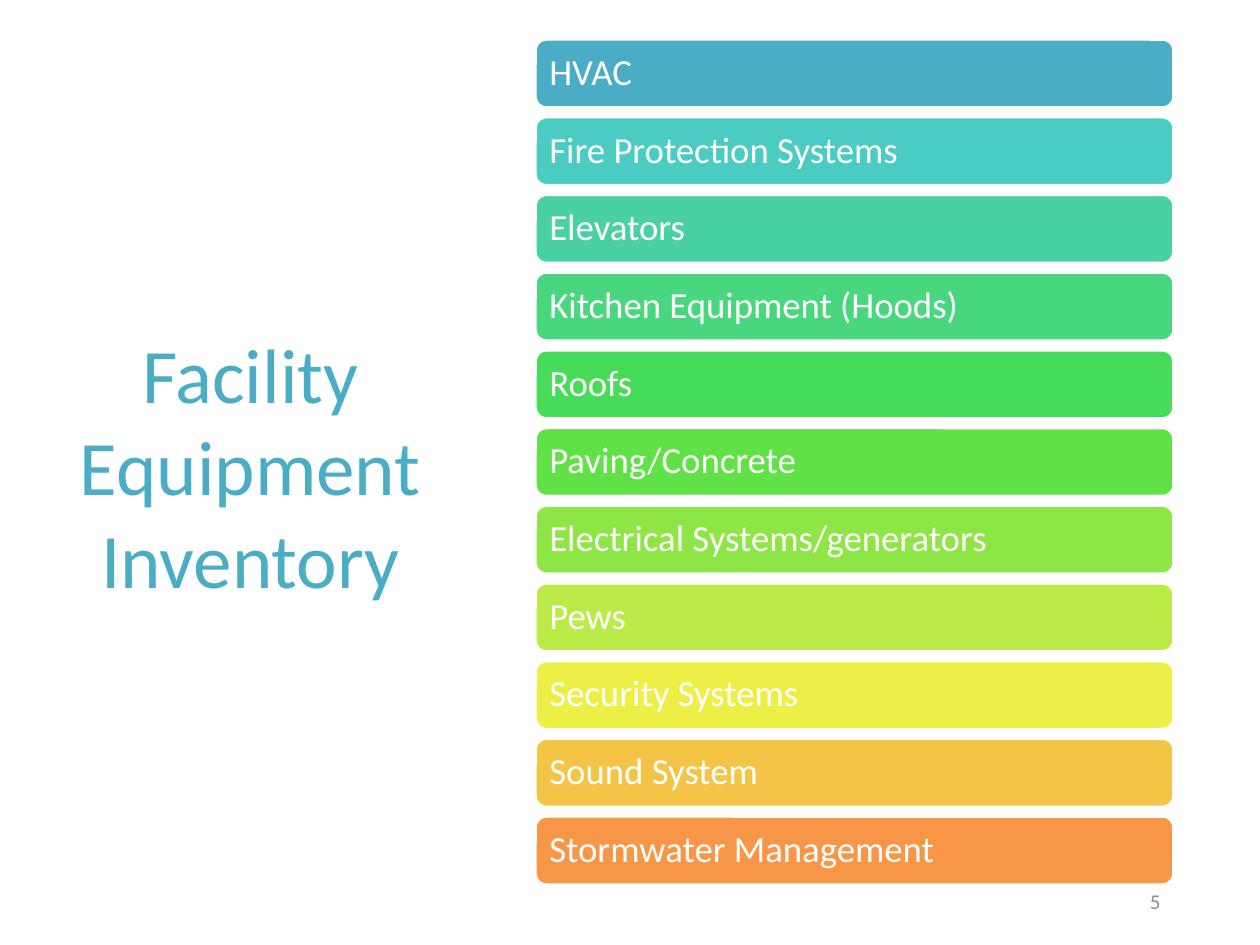
from dataclasses import dataclass

from pptx import Presentation
from pptx.dml.color import RGBColor
from pptx.enum.shapes import MSO_SHAPE
from pptx.enum.text import MSO_ANCHOR, PP_ALIGN
from pptx.util import Emu, Pt

SCALE = 914400 / 126


@dataclass(frozen=True)
class Theme:
    font: str = "Calibri"
    title: str = "4BACC6"
    white: str = "FFFFFF"
    gray: str = "8C8C8C"
    title_size: int = 44
    item_size: int = 21
    page_size: int = 12


THEME = Theme()
ITEMS = [
    ("HVAC", "4BACC6"),
    ("Fire Protection Systems", "4ACCC3"),
    ("Elevators", "49D1A3"),
    ("Kitchen Equipment (Hoods)", "48D77E"),
    ("Roofs", "47DC57"),
    ("Paving/Concrete", "60E146"),
    ("Electrical Systems/generators", "8DE646"),
    ("Pews", "BCEA46"),
    ("Security Systems", "EEEF46"),
    ("Sound System", "F3C446"),
    ("Stormwater Management", "F79646"),
]


def px(n):
    return Emu(round(n * SCALE))


def write(shape, text, size, color, align):
    """Fill a shape with one run, centred vertically; return its paragraph."""
    frame = shape.text_frame
    frame.word_wrap = True
    frame.vertical_anchor = MSO_ANCHOR.MIDDLE
    para = frame.paragraphs[0]
    para.alignment = align
    run = para.add_run()
    run.text = text
    run.font.name = THEME.font
    run.font.size = Pt(size)
    run.font.color.rgb = RGBColor.from_string(color)
    return para


def add_title(slide, box):
    title = slide.shapes.title
    title.left, title.top, title.width, title.height = map(px, box)
    write(title, "Facility Equipment Inventory", THEME.title_size,
          THEME.title, PP_ALIGN.CENTER)


def add_page(slide, box):
    page = slide.shapes.add_textbox(*map(px, box))
    write(page, "5", THEME.page_size, THEME.gray, PP_ALIGN.RIGHT)


def add_bar(group, box, text, color):
    bar = group.shapes.add_shape(MSO_SHAPE.ROUNDED_RECTANGLE, *map(px, box))
    bar.shadow.inherit = False
    bar.fill.solid()
    bar.fill.fore_color.rgb = RGBColor.from_string(color)
    bar.line.color.rgb = RGBColor.from_string(THEME.white)
    bar.line.width = Pt(2)
    frame = bar.text_frame
    frame.margin_left = frame.margin_right = px(11)
    frame.margin_top = frame.margin_bottom = 0
    para = write(bar, text, THEME.item_size, THEME.white, PP_ALIGN.LEFT)
    para.line_spacing = 0.9


def add_list(slide, box, bar_height):
    """Stack the bars evenly from the top to the bottom of the box."""
    left, top, width, height = box
    pitch = (height - bar_height) / (len(ITEMS) - 1)
    group = slide.shapes.add_group_shape()
    for i, (text, color) in enumerate(ITEMS):
        add_bar(group, (left, top + i * pitch, width, bar_height), text, color)


def main():
    deck = Presentation()
    deck.slide_width, deck.slide_height = px(1260), px(945)
    slide = deck.slides.add_slide(deck.slide_layouts[5])
    add_title(slide, (54, 86, 393, 758))
    add_page(slide, (889, 876, 284, 50))
    add_list(slide, (535, 39, 639, 846), 69)
    deck.save("out.pptx")


if __name__ == "__main__":
    main()
